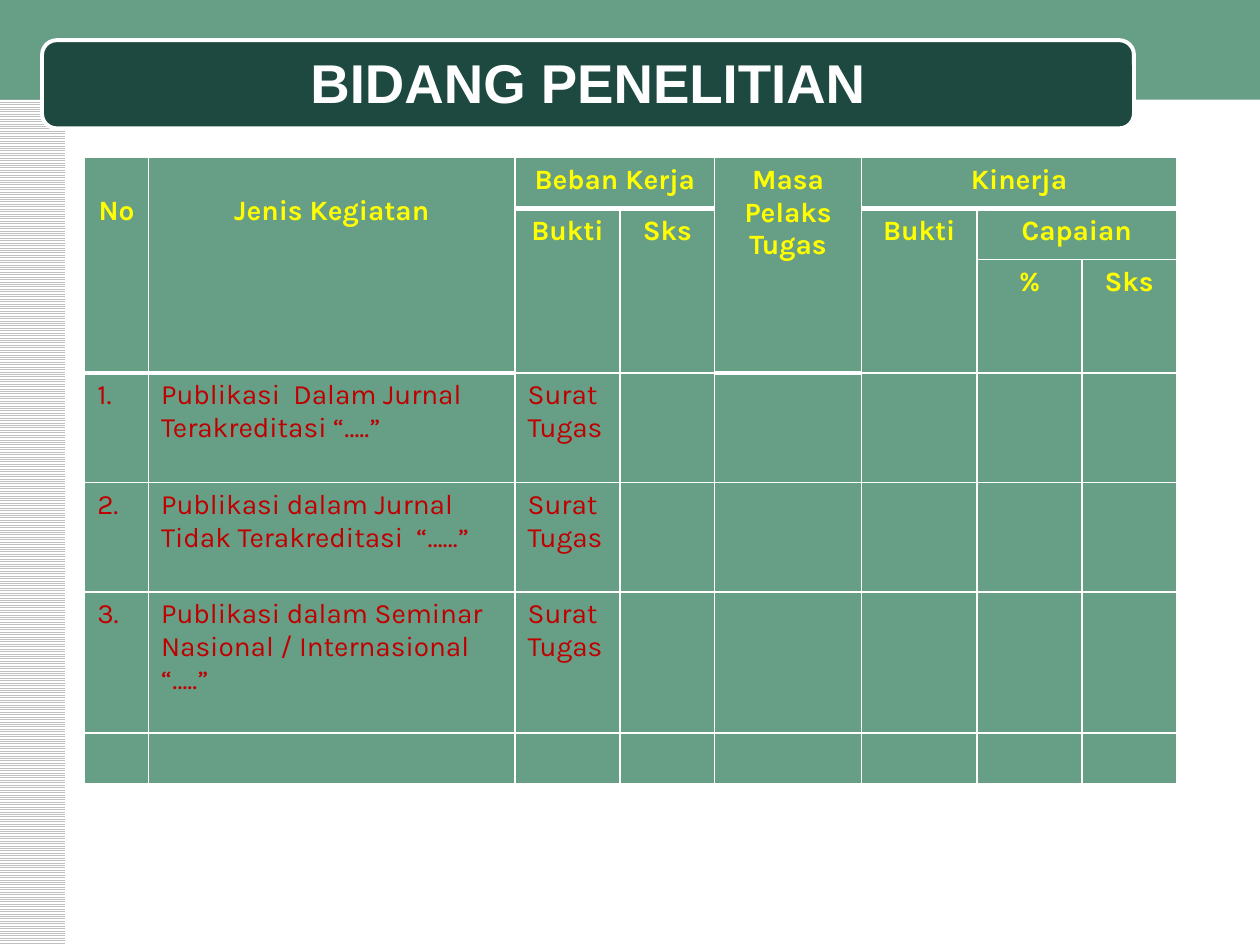
from dataclasses import dataclass

from lxml import etree
from pptx import Presentation
from pptx.dml.color import RGBColor
from pptx.enum.dml import MSO_PATTERN
from pptx.enum.shapes import MSO_SHAPE
from pptx.enum.text import MSO_ANCHOR, PP_ALIGN
from pptx.oxml.ns import qn
from pptx.util import Pt

RECT = MSO_SHAPE.RECTANGLE
ROUND = MSO_SHAPE.ROUNDED_RECTANGLE
STRIPES = MSO_PATTERN.LIGHT_HORIZONTAL
MIDDLE = MSO_ANCHOR.MIDDLE
LEFT, CENTER = PP_ALIGN.LEFT, PP_ALIGN.CENTER

COLORS = {
    "sage": "669E86", "pine": "1D4940", "white": "FFFFFF", "title": "FEFEFE",
    "gray": "C0C0C0", "head": "FFFF00", "body": "C00000",
}
WIDTHS = [36.5, 209.5, 60, 54, 84, 66, 60, 54]
HEIGHTS = [29.2, 29.2, 63.4, 62.6, 62.4, 80.6, 29.2]


@dataclass
class Panel:
    left: float
    top: float
    width: float
    height: float
    kind: int = RECT
    fill: str = "sage"
    line: float = 0


@dataclass
class Head:
    row: int
    col: int
    text: str
    down: int = 1
    across: int = 1
    inset: float = 3.6


BAND = Panel(0, 0, 720, 57)
STRIP = Panel(0, 0, 37.4, 540)
PLATE = Panel(24, 23, 624, 50.4, ROUND, "pine", 2.25)
HEADS = [
    Head(0, 0, "No", 3, inset=21.6),
    Head(0, 1, "Jenis Kegiatan", 3, inset=21.6),
    Head(0, 2, "Beban Kerja", across=2),
    Head(0, 4, "Masa Pelaks Tugas", 3),
    Head(0, 5, "Kinerja", across=3),
    Head(1, 2, "Bukti", 2),
    Head(1, 3, "Sks", 2),
    Head(1, 5, "Bukti", 2),
    Head(1, 6, "Capaian", across=2),
    Head(2, 6, "%"),
    Head(2, 7, "Sks"),
]
TASKS = [
    "Publikasi  Dalam Jurnal Terakreditasi “…..”",
    "Publikasi dalam Jurnal Tidak Terakreditasi  “……”",
    "Publikasi dalam Seminar Nasional / Internasional “…..”",
]


def tint(name: str) -> RGBColor:
    return RGBColor.from_string(COLORS[name])


def draw_panel(slide, panel: Panel):
    shape = slide.shapes.add_shape(
        panel.kind, Pt(panel.left), Pt(panel.top), Pt(panel.width), Pt(panel.height))
    shape.shadow.inherit = False
    shape.fill.solid()
    shape.fill.fore_color.rgb = tint(panel.fill)
    if panel.line:
        shape.line.color.rgb = tint("white")
        shape.line.width = Pt(panel.line)
    else:
        shape.line.fill.background()
    return shape


def write(frame, text: str, size: float, font: str, color: str, bold: bool, align) -> None:
    para = frame.paragraphs[0]
    para.alignment = align
    run = para.add_run()
    run.text = text
    run.font.size = Pt(size)
    run.font.name = font
    run.font.bold = bold
    run.font.color.rgb = tint(color)


def draw_edge(cell, side: str, width: float) -> None:
    line = etree.SubElement(cell._tc.get_or_add_tcPr(), qn(f"a:ln{side}"), w=str(Pt(width)))
    fill = etree.SubElement(line, qn("a:solidFill"))
    etree.SubElement(fill, qn("a:srgbClr"), val=COLORS["white"])


def draw_title(slide) -> None:
    frame = slide.shapes.add_textbox(Pt(36), Pt(21.6), Pt(600), Pt(50.4)).text_frame
    frame.word_wrap = True
    frame.vertical_anchor = MIDDLE
    write(frame, "BIDANG PENELITIAN", 31.2, "Arial", "title", True, CENTER)


def draw_table(slide) -> None:
    frame = slide.shapes.add_table(
        len(HEIGHTS), len(WIDTHS), Pt(48.4), Pt(90), Pt(sum(WIDTHS)), Pt(sum(HEIGHTS)))
    table = frame.table
    table.first_row = table.horz_banding = False
    for col, width in zip(table.columns, WIDTHS):
        col.width = Pt(width)
    for row, height in zip(table.rows, HEIGHTS):
        row.height = Pt(height)
    for head in HEADS:
        cell = table.cell(head.row, head.col)
        if head.down * head.across > 1:
            cell.merge(table.cell(head.row + head.down - 1, head.col + head.across - 1))
        cell.margin_top = Pt(head.inset)
        write(cell.text_frame, head.text, 16, "Karla", "head", True, CENTER)
    for num, task in enumerate(TASKS, 1):
        for col, text in enumerate([f"{num}.", task, "Surat Tugas"]):
            cell = table.cell(num + 2, col)
            write(cell.text_frame, text, 16, "Karla", "body", False, LEFT)
    for index, row in enumerate(table.rows):
        for cell in row.cells:
            if cell.is_spanned:
                continue
            draw_edge(cell, "L", 1)
            draw_edge(cell, "R", 1)
            if index == 0:
                draw_edge(cell, "T", 1)
            draw_edge(cell, "B", 1 if index else 3)
            cell.fill.solid()
            cell.fill.fore_color.rgb = tint("sage")


def main() -> None:
    deck = Presentation()
    deck.slide_width, deck.slide_height = Pt(720), Pt(540)
    slide = deck.slides.add_slide(deck.slide_layouts[6])
    strip = draw_panel(slide, STRIP)
    strip.fill.patterned()
    strip.fill.pattern = STRIPES
    strip.fill.fore_color.rgb = tint("gray")
    strip.fill.back_color.rgb = tint("white")
    draw_panel(slide, BAND)
    draw_panel(slide, PLATE)
    draw_title(slide)
    draw_table(slide)
    deck.save("out.pptx")


if __name__ == "__main__":
    main()
